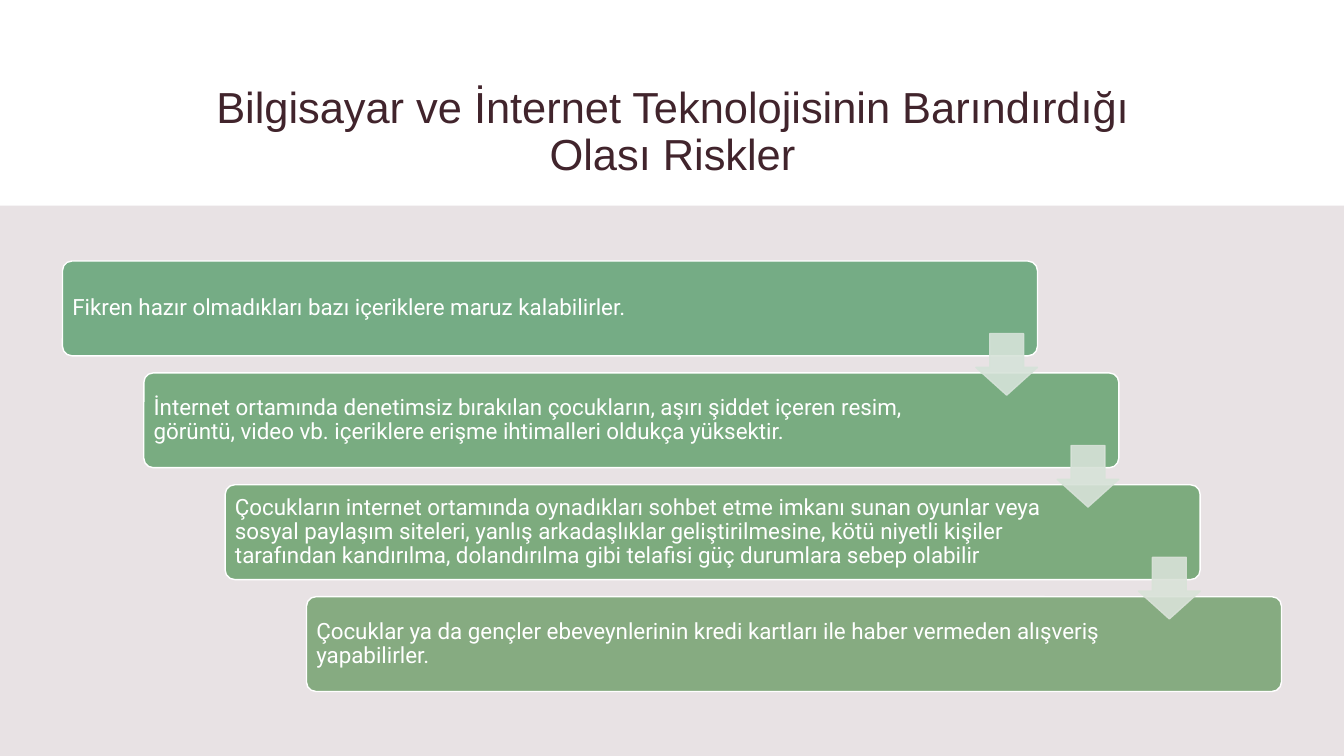
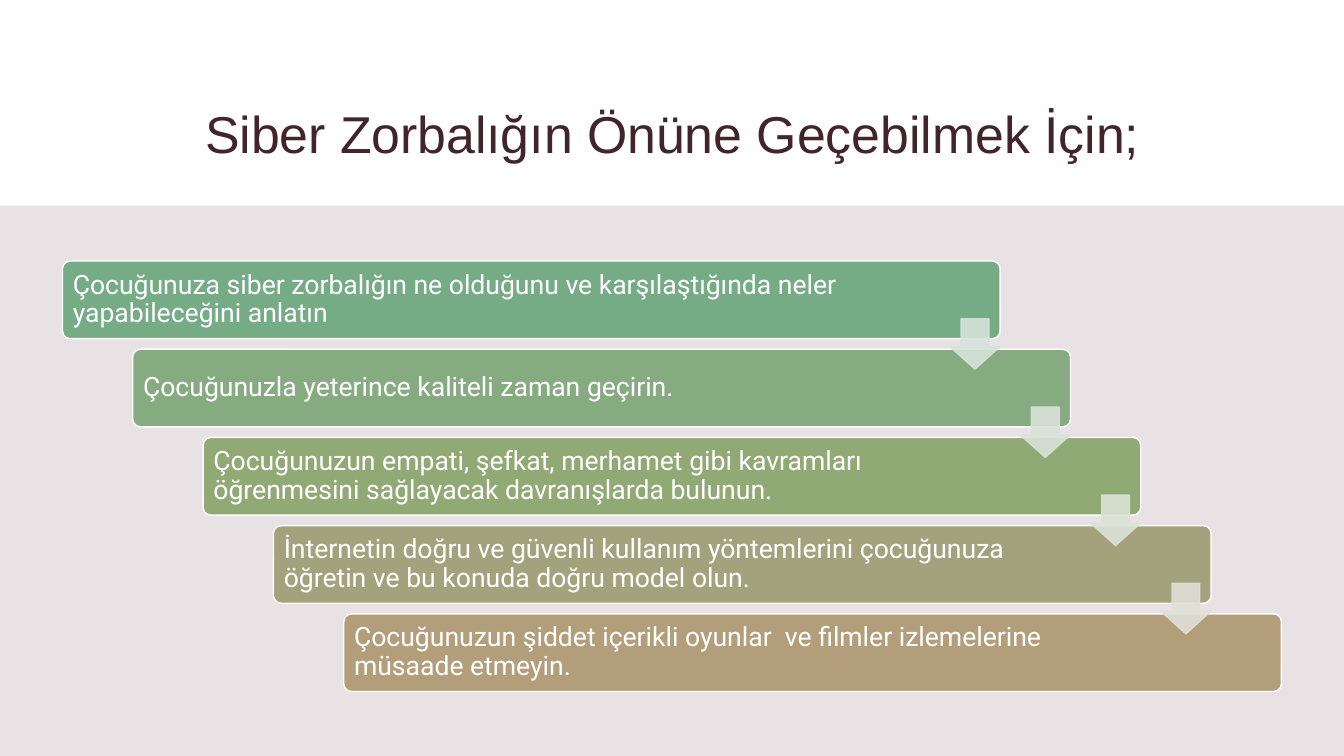
from dataclasses import dataclass

from lxml.etree import SubElement
from pptx import Presentation
from pptx.dml.color import RGBColor
from pptx.enum.shapes import MSO_SHAPE
from pptx.enum.text import MSO_ANCHOR, PP_ALIGN
from pptx.oxml.ns import qn
from pptx.util import Inches, Pt


@dataclass(frozen=True)
class Theme:
    """Colours, fonts and type sizes shared by the slides."""
    title_color: str = "41242C"
    band: str = "E8E2E4"
    light: str = "FFFFFF"
    title_font: str = "Arial"
    body_font: str = "Roboto"
    outline: float = 1
    arrow_opacity: int = 90
    tight: float = 0.9


@dataclass(frozen=True)
class Staircase:
    """A titled slide whose steps descend to the right."""
    title: str
    title_size: int
    title_spacing: float
    step_width: float
    step_height: float
    step_size: int
    inset: float
    right_inset: float
    steps: tuple
    arrow_colors: tuple


THEME = Theme()
SLIDE_WIDTH, SLIDE_HEIGHT, BAND_TOP = 13.33, 7.5, 2.04
STAIRS_LEFT, STAIRS_TOP, STAIRS_WIDTH, STAIRS_HEIGHT = 0.62, 2.59, 12.09, 4.27
ARROW_RATIO = 0.65

RISKS = Staircase(
    title="Bilgisayar ve İnternet Teknolojisinin Barındırdığı Olası Riskler",
    title_size=31, title_spacing=THEME.tight,
    step_width=9.67, step_height=0.94, step_size=16,
    inset=0.07, right_inset=1.48,
    steps=(
        ("75AC85", "Fikren hazır olmadıkları bazı içeriklere maruz kalabilirler."),
        ("79AC81", "İnternet ortamında denetimsiz bırakılan çocukların, aşırı şiddet içeren "
                   "resim, görüntü, video vb. içeriklere erişme ihtimalleri oldukça yüksektir."),
        ("7DAB7E", "Çocukların internet ortamında oynadıkları sohbet etme imkanı sunan oyunlar "
                   "veya sosyal paylaşım siteleri, yanlış arkadaşlıklar geliştirilmesine, kötü "
                   "niyetli kişiler tarafından kandırılma, dolandırılma gibi telafisi güç "
                   "durumlara sebep olabilir"),
        ("86AB81", "Çocuklar ya da gençler ebeveynlerinin kredi kartları ile haber vermeden "
                   "alışveriş yapabilirler."),
    ),
    arrow_colors=("D6E3D9", "D7E2D8", "D9E2D8"),
)

PREVENTION = Staircase(
    title="Siber Zorbalığın Önüne Geçebilmek İçin;",
    title_size=37, title_spacing=1.0,
    step_width=9.3, step_height=0.77, step_size=19,
    inset=0.08, right_inset=1.27,
    steps=(
        ("75AC85", "Çocuğunuza siber zorbalığın ne olduğunu ve karşılaştığında neler "
                   "yapabileceğini anlatın"),
        ("86AB81", "Çocuğunuzla yeterince kaliteli zaman geçirin."),
        ("91A974", "Çocuğunuzun empati, şefkat, merhamet gibi kavramları öğrenmesini "
                   "sağlayacak davranışlarda bulunun."),
        ("A2A37C", "İnternetin doğru ve güvenli kullanım yöntemlerini çocuğunuza öğretin ve "
                   "bu konuda doğru model olun."),
        ("B39E7B", "Çocuğunuzun şiddet içerikli oyunlar  ve filmler izlemelerine müsaade "
                   "etmeyin."),
    ),
    arrow_colors=("D6E3D9", "D9E2D8", "DCE2D6", "E0E0D7"),
)


def add_block(slide, preset, left, top, width, height, fill, line=None):
    """Add a flat filled shape, outlined if a line colour is given."""
    block = slide.shapes.add_shape(
        preset, Inches(left), Inches(top), Inches(width), Inches(height))
    block.shadow.inherit = False
    block.fill.solid()
    block.fill.fore_color.rgb = RGBColor.from_string(fill)
    if line:
        block.line.color.rgb = RGBColor.from_string(line)
        block.line.width = Pt(THEME.outline)
    else:
        block.line.fill.background()
    return block


def write(frame, text, font, size, color, align, spacing):
    """Write one vertically centred, wrapped paragraph."""
    frame.word_wrap = True
    frame.vertical_anchor = MSO_ANCHOR.MIDDLE
    paragraph = frame.paragraphs[0]
    paragraph.text = text
    paragraph.alignment = align
    paragraph.line_spacing = spacing
    style = paragraph.runs[0].font
    style.name, style.size = font, Pt(size)
    style.color.rgb = RGBColor.from_string(color)


def add_title(slide, stairs):
    """Add the centred slide title."""
    heading = slide.shapes.add_textbox(
        Inches(1.56), Inches(0.77), Inches(10.22), Inches(1.09))
    write(heading.text_frame, stairs.title, THEME.title_font, stairs.title_size,
          THEME.title_color, PP_ALIGN.CENTER, stairs.title_spacing)


def add_step(slide, stairs, left, top, fill, text):
    """Add one rounded step with its text."""
    step = add_block(slide, MSO_SHAPE.ROUNDED_RECTANGLE, left, top,
                     stairs.step_width, stairs.step_height, fill, THEME.light)
    step.adjustments[0] = 0.1
    frame = step.text_frame
    frame.margin_left = frame.margin_top = frame.margin_bottom = Inches(stairs.inset)
    frame.margin_right = Inches(stairs.right_inset)
    write(frame, text, THEME.body_font, stairs.step_size, THEME.light,
          PP_ALIGN.LEFT, THEME.tight)


def add_arrow(slide, right, middle, size, color):
    """Add a translucent down arrow by its right edge and middle height."""
    arrow = add_block(slide, MSO_SHAPE.DOWN_ARROW, right - size, middle - size / 2,
                      size, size, color, color)
    arrow.adjustments[0], arrow.adjustments[1] = 0.55, 0.45
    for tint in arrow.element.spPr.iter(qn("a:srgbClr")):
        SubElement(tint, qn("a:alpha"), val=str(THEME.arrow_opacity * 1000))


def add_stairs(slide, stairs):
    """Spread the steps over the band and bridge each gap with an arrow."""
    gaps = len(stairs.steps) - 1
    shift = (STAIRS_WIDTH - stairs.step_width) / gaps
    drop = (STAIRS_HEIGHT - stairs.step_height) / gaps
    for index, (fill, text) in enumerate(stairs.steps):
        add_step(slide, stairs, STAIRS_LEFT + index * shift,
                 STAIRS_TOP + index * drop, fill, text)
    for index, color in enumerate(stairs.arrow_colors):
        add_arrow(slide, STAIRS_LEFT + index * shift + stairs.step_width,
                  STAIRS_TOP + index * drop + (stairs.step_height + drop) / 2,
                  ARROW_RATIO * stairs.step_height, color)


def main():
    """Build and save the presentation."""
    deck = Presentation()
    deck.slide_width, deck.slide_height = Inches(SLIDE_WIDTH), Inches(SLIDE_HEIGHT)
    for stairs in (RISKS, PREVENTION):
        slide = deck.slides.add_slide(deck.slide_layouts[6])
        add_title(slide, stairs)
        add_block(slide, MSO_SHAPE.RECTANGLE, 0, BAND_TOP, SLIDE_WIDTH,
                  SLIDE_HEIGHT - BAND_TOP, THEME.band)
        add_stairs(slide, stairs)
    deck.save("out.pptx")


if __name__ == "__main__":
    main()
